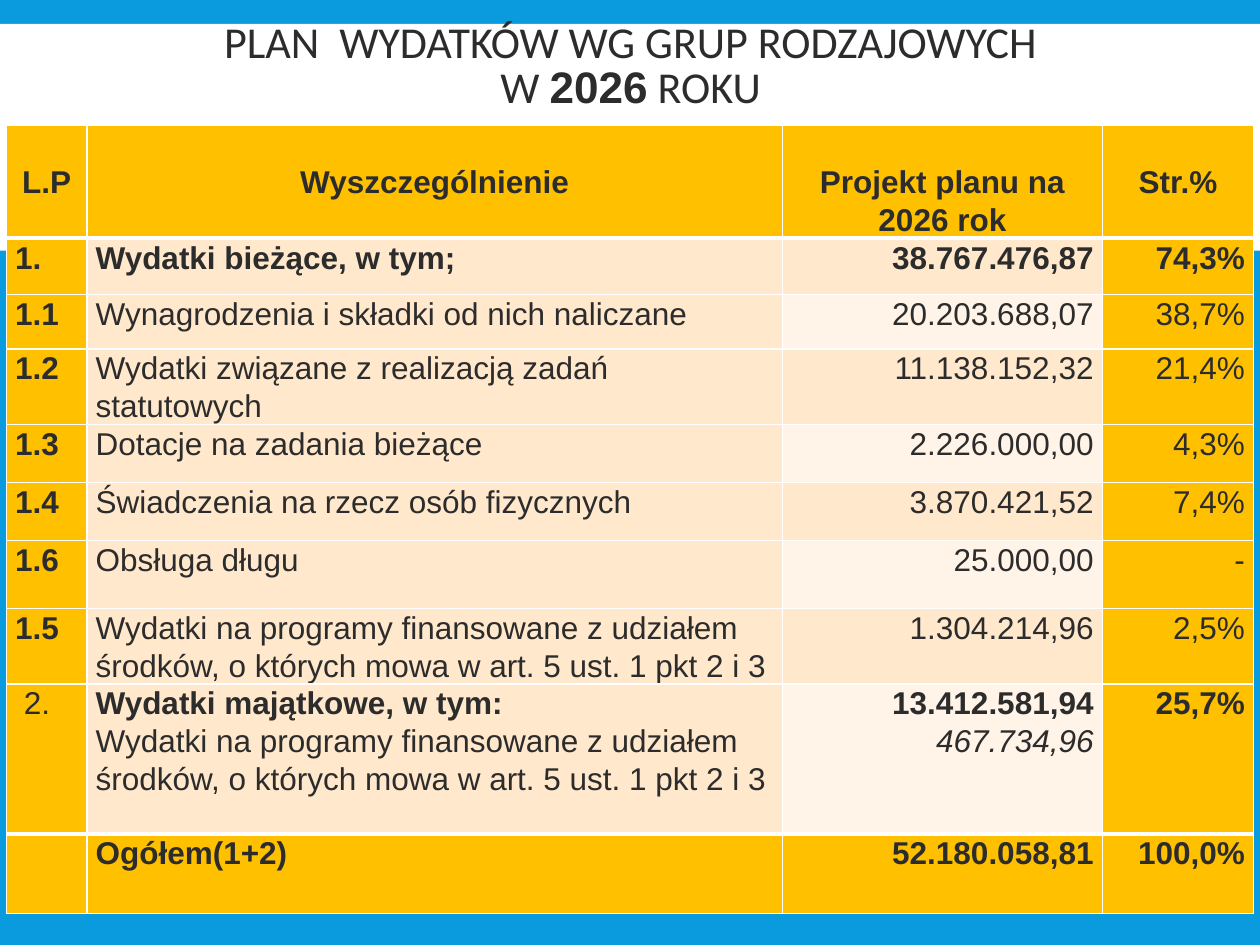
from lxml.etree import SubElement
from pptx import Presentation
from pptx.dml.color import RGBColor
from pptx.enum.shapes import MSO_SHAPE
from pptx.enum.text import MSO_ANCHOR, PP_ALIGN
from pptx.oxml.ns import qn
from pptx.util import Inches, Pt

COLORS = {
    "background": "099BDD",
    "white": "FFFFFF",
    "text": "2C2C2C",
    "gold": "FFC000",
    "peach": "FFE8CC",
    "cream": "FFF4E7",
}

COLUMN_WIDTHS = [0.64, 5.52, 2.54, 1.2]
ROW_HEIGHTS = [0.88, 0.45, 0.43, 0.6, 0.46, 0.46, 0.54, 0.6, 1.19, 0.63]
ALIGNMENTS = [PP_ALIGN.LEFT, PP_ALIGN.LEFT, PP_ALIGN.RIGHT, PP_ALIGN.RIGHT]

PROGRAMMES = ("Wydatki na programy finansowane z udziałem środków, "
              "o których mowa w art. 5 ust. 1 pkt 2 i 3")

# A line feed inside a cell separates paragraphs
ROWS = [
    ["L.P", "Wyszczególnienie", "Projekt planu na 2026 rok", "Str.%"],
    ["1.", "Wydatki bieżące, w tym;", "38.767.476,87", "74,3%"],
    ["1.1", "Wynagrodzenia i składki od nich naliczane", "20.203.688,07", "38,7%"],
    ["1.2", "Wydatki związane z realizacją zadań statutowych", "11.138.152,32", "21,4%"],
    ["1.3", "Dotacje na zadania bieżące", "2.226.000,00", "4,3%"],
    ["1.4", "Świadczenia na rzecz osób fizycznych", "3.870.421,52", "7,4%"],
    ["1.6", "Obsługa długu", "25.000,00", "-"],
    ["1.5", PROGRAMMES, "1.304.214,96", "2,5%"],
    [" 2.", "Wydatki majątkowe, w tym:\n" + PROGRAMMES,
     "13.412.581,94\n467.734,96", "25,7%"],
    ["", "Ogółem(1+2)", "52.180.058,81", "100,0%"],
]
HEADER, CURRENT, CAPITAL, TOTAL = 0, 1, 8, 9
SUMMARY_ROWS = {HEADER, CURRENT, CAPITAL, TOTAL}


def color(name):
    return RGBColor.from_string(COLORS[name])


def add_run(paragraph, text, size, font="Arial", bold=False, italic=False):
    run = paragraph.add_run()
    run.text = text
    run.font.name = font
    run.font.size = Pt(size)
    run.font.bold = bold
    run.font.italic = italic
    run.font.color.rgb = color("text")


def add_band(slide):
    band = slide.shapes.add_shape(
        MSO_SHAPE.RECTANGLE, 0, Inches(0.19), Inches(10), Inches(1.8))
    band.shadow.inherit = False
    band.fill.solid()
    band.fill.fore_color.rgb = color("white")
    band.line.fill.background()
    # Send behind the title
    slide.shapes.element.insert(2, band.element)


def format_title(slide):
    title = slide.shapes.title
    title.left, title.top = Inches(0.53), Inches(-0.19)
    title.width, title.height = Inches(8.95), Inches(1.25)
    frame = title.text_frame
    frame.word_wrap = True
    frame.vertical_anchor = MSO_ANCHOR.MIDDLE
    frame.margin_top, frame.margin_bottom = Inches(0.25), Inches(0.05)
    paragraph = frame.paragraphs[0]
    paragraph.alignment = PP_ALIGN.CENTER
    paragraph.line_spacing = 0.85
    add_run(paragraph, "PLAN  WYDATKÓW WG GRUP RODZAJOWYCH", 25.2, "Calibri")
    paragraph.add_line_break()
    add_run(paragraph, "W ", 25.2, "Calibri")
    add_run(paragraph, "2026", 25.2, bold=True)
    add_run(paragraph, " ROKU", 25.2, "Calibri")


def set_borders(cell, top, bottom):
    properties = cell._tc.get_or_add_tcPr()
    widths = {"a:lnL": 1, "a:lnR": 1, "a:lnT": top, "a:lnB": bottom}
    for position, (tag, width) in enumerate(widths.items()):
        line = SubElement(properties, qn(tag), w=str(Pt(width)))
        fill = SubElement(line, qn("a:solidFill"))
        SubElement(fill, qn("a:srgbClr"), val=COLORS["white"])
        properties.insert(position, line)


def cell_fill(row, column):
    if row in (HEADER, TOTAL) or column in (0, 3):
        return "gold"
    if column == 2 and row % 2 == 0:
        return "cream"
    return "peach"


def fill_cell(cell, row, column):
    cell.margin_left = cell.margin_right = Inches(0.07)
    cell.margin_top = Inches(0.3 if row == HEADER else 0)
    cell.margin_bottom = 0
    cell.fill.solid()
    cell.fill.fore_color.rgb = color(cell_fill(row, column))
    set_borders(cell, top=3 if row in (CURRENT, TOTAL) else 1,
                bottom=3 if row in (HEADER, CAPITAL) else 1)

    # Only the first paragraph of a summary row is bold
    summary = row in SUMMARY_ROWS and (row, column) != (CAPITAL, 0)
    index = column == 0 and row != CAPITAL
    frame = cell.text_frame
    for number, text in enumerate(ROWS[row][column].split("\n")):
        paragraph = frame.add_paragraph() if number else frame.paragraphs[0]
        paragraph.alignment = PP_ALIGN.CENTER if row == HEADER else ALIGNMENTS[column]
        paragraph.line_spacing = 1.07
        if text:
            add_run(paragraph, text, 18, bold=number == 0 and (summary or index),
                    italic=number > 0 and column == 2)


def add_expense_table(slide):
    table = slide.shapes.add_table(
        len(ROWS), len(COLUMN_WIDTHS), Inches(0.05), Inches(0.99),
        Inches(sum(COLUMN_WIDTHS)), Inches(sum(ROW_HEIGHTS))).table
    for column, width in zip(table.columns, COLUMN_WIDTHS):
        column.width = Inches(width)
    for row, height in enumerate(ROW_HEIGHTS):
        table.rows[row].height = Inches(height)
        for column in range(len(COLUMN_WIDTHS)):
            fill_cell(table.cell(row, column), row, column)


def main():
    presentation = Presentation()
    presentation.slide_width = Inches(10)
    presentation.slide_height = Inches(7.5)
    slide = presentation.slides.add_slide(presentation.slide_layouts[5])
    slide.background.fill.solid()
    slide.background.fill.fore_color.rgb = color("background")
    add_band(slide)
    format_title(slide)
    add_expense_table(slide)
    presentation.save("out.pptx")


if __name__ == "__main__":
    main()
